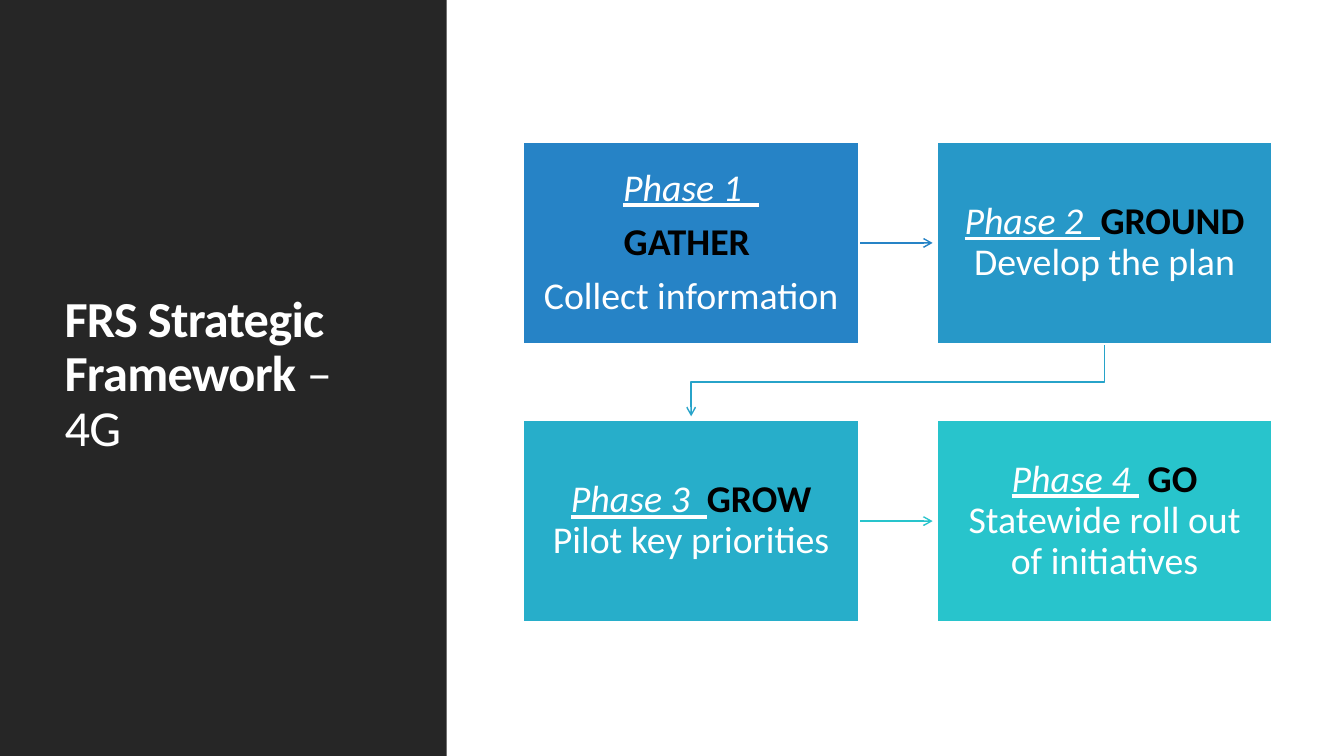
import pptx
import pptx.util
import pptx.dml.color
import pptx.enum.shapes
import pptx.enum.text
import pptx.oxml.ns
import lxml.etree
from dataclasses import dataclass

Inches, Pt = pptx.util.Inches, pptx.util.Pt

# Content: each phase is a list of paragraphs, each a list of (style, text)
TITLE = [("bold", "FRS Strategic Framework "), ("plain", "– 4G")]
PHASES = [
    [[("phase", "Phase 1  ")], [("key", "GATHER ")], [("plain", "Collect information")]],
    [[("phase", "Phase 2  "), ("key", "GROUND"), ("plain", " Develop the plan")]],
    [[("phase", "Phase 3  "), ("key", "GROW"), ("plain", " Pilot key priorities")]],
    [[("phase", "Phase 4 "), ("plain", " "), ("key", "GO"),
      ("plain", " Statewide roll out of initiatives")]],
]


@dataclass(frozen=True)
class Theme:
    font: str = "Calibri"
    title_size: int = 36
    phase_size: int = 27
    panel: str = "262626"
    light: str = "FFFFFF"
    dark: str = "000000"
    boxes: tuple = ("2683C6", "2798C8", "27AECA", "28C4CC")
    arrows: tuple = ("2683C6", "27A3C9", "28C4CC")


THEME = Theme()

# Grid of phase boxes, in inches
LEFT, TOP = 5.19, 1.41
BOX_W, BOX_H = 3.33, 2.0
STEP_X, STEP_Y = 4.1, 2.76
ARROW_GAP = 0.04


def rgb(value):
    return pptx.dml.color.RGBColor.from_string(value)


def add_runs(paragraph, pieces, size):
    paragraph.line_spacing = 0.9
    for style, words in pieces:
        run = paragraph.add_run()
        run.text = words
        font = run.font
        font.name, font.size = THEME.font, Pt(size)
        font.bold = style in ("bold", "key")
        font.italic = font.underline = style == "phase"
        font.color.rgb = rgb(THEME.dark if style == "key" else THEME.light)


def add_box(left, top, width, height, colour):
    box = slide.shapes.add_shape(
        pptx.enum.shapes.MSO_SHAPE.RECTANGLE,
        Inches(left), Inches(top), Inches(width), Inches(height))
    box.shadow.inherit = False
    box.fill.solid()
    box.fill.fore_color.rgb = rgb(colour)
    return box


def style_arrow(arrow, colour):
    arrow.line.color.rgb = rgb(colour)
    arrow.line.width = Pt(1)
    tail = lxml.etree.SubElement(arrow.line._get_or_add_ln(), pptx.oxml.ns.qn("a:tailEnd"))
    tail.set("type", "arrow")


def add_straight_arrow(row, colour):
    start = LEFT + BOX_W
    middle = Inches(TOP + row * STEP_Y + BOX_H / 2)
    arrow = slide.shapes.add_connector(
        pptx.enum.shapes.MSO_CONNECTOR.STRAIGHT,
        Inches(start), middle, Inches(LEFT + STEP_X - ARROW_GAP), middle)
    style_arrow(arrow, colour)
    lxml.etree.SubElement(arrow._element.spPr, pptx.oxml.ns.qn("a:effectLst"))


def add_bent_arrow(colour):
    end_x = LEFT + BOX_W / 2
    start_x = end_x + STEP_X
    start_y, end_y = TOP + BOX_H, TOP + STEP_Y - ARROW_GAP
    bend_y = TOP + (BOX_H + STEP_Y) / 2
    corners = [(start_x, bend_y), (end_x, bend_y), (end_x, end_y)]
    outline = slide.shapes.build_freeform(Inches(start_x), Inches(start_y))
    outline.add_line_segments([(Inches(x), Inches(y)) for x, y in corners], close=False)
    arrow = outline.convert_to_shape()
    arrow.shadow.inherit = False
    arrow.fill.background()
    style_arrow(arrow, colour)


deck = pptx.Presentation()
deck.slide_width, deck.slide_height = Inches(13.33), Inches(7.5)
slide = deck.slides.add_slide(deck.slide_layouts[5])

# Dark side panel, behind the title
panel = add_box(0, 0, 4.43, 7.5, THEME.panel)
panel.line.fill.background()
slide.shapes._spTree.insert(2, panel._element)

# Title
title = slide.shapes.title
title.left, title.top = Inches(0.54), Inches(0.57)
title.width, title.height = Inches(3.37), Inches(6.31)
title_frame = title.text_frame
title_frame.word_wrap = True
title_frame.auto_size = pptx.enum.text.MSO_AUTO_SIZE.NONE
title_frame.vertical_anchor = pptx.enum.text.MSO_ANCHOR.MIDDLE
title_frame.paragraphs[0].alignment = pptx.enum.text.PP_ALIGN.LEFT
add_runs(title_frame.paragraphs[0], TITLE, THEME.title_size)
for run in title_frame.paragraphs[0].runs:
    run.font._element.set("spc", "-50")

# Arrows between phases
add_straight_arrow(0, THEME.arrows[0])
add_bent_arrow(THEME.arrows[1])
add_straight_arrow(1, THEME.arrows[2])

# Phase boxes
for index, (phase, colour) in enumerate(zip(PHASES, THEME.boxes)):
    row, column = divmod(index, 2)
    box = add_box(LEFT + column * STEP_X, TOP + row * STEP_Y, BOX_W, BOX_H, colour)
    box.line.color.rgb = rgb(THEME.light)
    box.line.width = Pt(1.25)
    frame = box.text_frame
    frame.word_wrap = True
    frame.vertical_anchor = pptx.enum.text.MSO_ANCHOR.MIDDLE
    frame.margin_left = frame.margin_right = Inches(0.16)
    frame.margin_top = frame.margin_bottom = Inches(0.17)
    for number, pieces in enumerate(phase):
        paragraph = frame.add_paragraph() if number else frame.paragraphs[0]
        paragraph.alignment = pptx.enum.text.PP_ALIGN.CENTER
        paragraph.space_after = Pt(0.35 * THEME.phase_size)
        add_runs(paragraph, pieces, THEME.phase_size)

deck.save("out.pptx")
